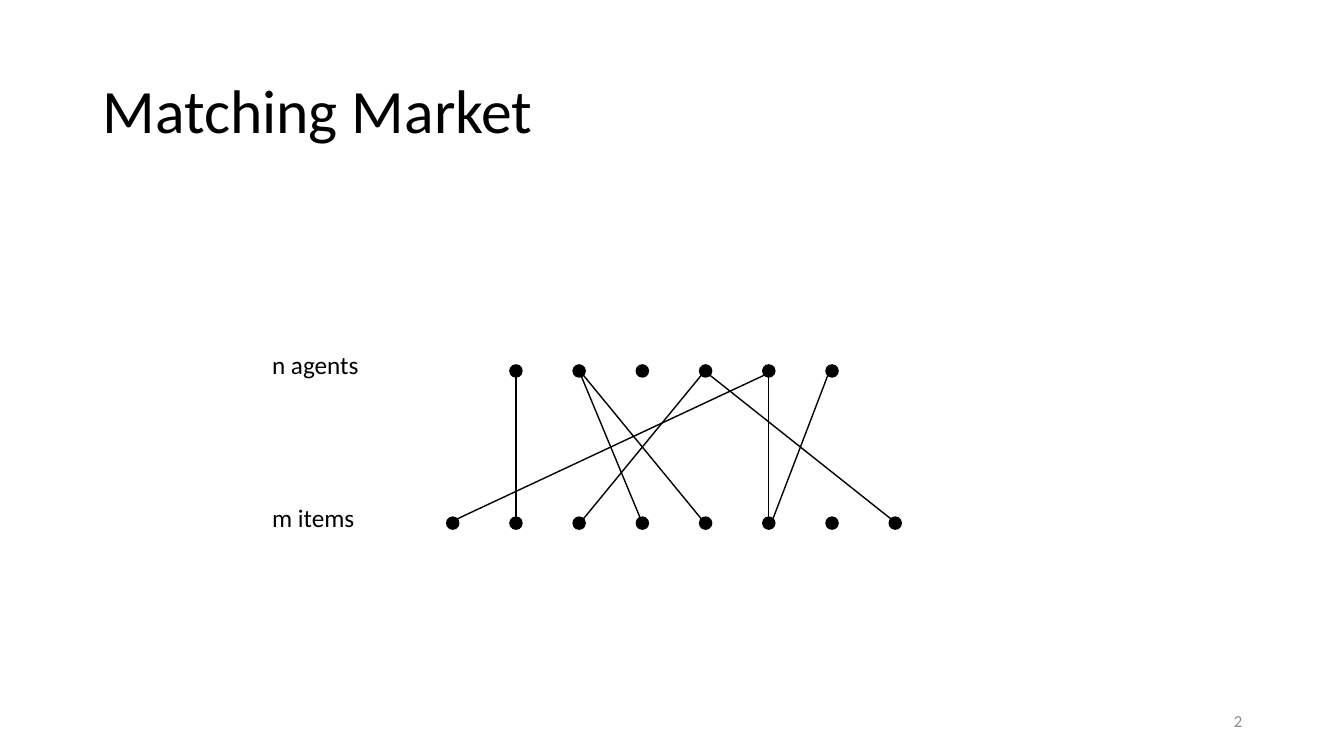
from dataclasses import dataclass

from lxml import etree
from pptx import Presentation
from pptx.dml.color import RGBColor
from pptx.enum.shapes import MSO_CONNECTOR, MSO_SHAPE
from pptx.enum.text import MSO_ANCHOR, PP_ALIGN
from pptx.oxml.ns import qn
from pptx.util import Inches, Pt

OVAL = MSO_SHAPE.OVAL
STRAIGHT = MSO_CONNECTOR.STRAIGHT
TOP, MIDDLE = MSO_ANCHOR.TOP, MSO_ANCHOR.MIDDLE
LEFT, RIGHT = PP_ALIGN.LEFT, PP_ALIGN.RIGHT
BLANK_LAYOUT = 6


@dataclass(frozen=True)
class Theme:
    font: str = "Calibri"
    ink: RGBColor = RGBColor(0, 0, 0)
    muted: RGBColor = RGBColor(0x8C, 0x8C, 0x8C)
    title_size: int = 44
    label_size: int = 18
    number_size: int = 12
    line_width: int = 1


THEME = Theme()
SLIDE_WIDTH, SLIDE_HEIGHT = 13.33, 7.5

# Graph grid, in inches: column 0 holds the first item.
FIRST_COLUMN, COLUMN_STEP = 4.49, 0.627
AGENT_ROW, ITEM_ROW = 3.68, 5.19
DOT_SIZE = 0.12
RIM_OFFSET = 0.04
LABEL_LEFT, LABEL_RISE = 2.6, 0.26
LABEL_SIZE = (2.46, 0.4)

AGENT_COLUMNS = range(1, 7)
ITEM_COLUMNS = range(8)
# Pairs of agent column and item column.
CENTRE_EDGES = [(1, 1), (5, 5), (2, 3)]
RIM_EDGES = [(4, 7), (4, 2), (6, 5), (2, 4), (5, 0)]


def column_x(column):
    return FIRST_COLUMN + column * COLUMN_STEP


def add_text(slide, text, box, size, color=THEME.ink, anchor=TOP, align=LEFT):
    shape = slide.shapes.add_textbox(*map(Inches, box))
    frame = shape.text_frame
    frame.word_wrap = True
    frame.vertical_anchor = anchor
    frame.text = text
    paragraph = frame.paragraphs[0]
    paragraph.alignment = align
    font = paragraph.runs[0].font
    font.name, font.size = THEME.font, Pt(size)
    font.color.rgb = color
    return paragraph


def add_dot(slide, column, row_y):
    left, top = column_x(column) - DOT_SIZE / 2, row_y - DOT_SIZE / 2
    dot = slide.shapes.add_shape(
        OVAL, Inches(left), Inches(top), Inches(DOT_SIZE), Inches(DOT_SIZE))
    dot.shadow.inherit = False
    dot.fill.solid()
    dot.fill.fore_color.rgb = THEME.ink
    dot.line.color.rgb = THEME.ink
    dot.line.width = Pt(THEME.line_width)


def add_edge(slide, agent, item, inset=0):
    """Join an agent to an item, each end moved diagonally inward by inset."""
    shift = inset if item > agent else -inset
    ends = (column_x(agent) + shift, AGENT_ROW + inset,
            column_x(item) - shift, ITEM_ROW - inset)
    edge = slide.shapes.add_connector(STRAIGHT, *map(Inches, ends))
    edge.line.color.rgb = THEME.ink
    edge.line.width = Pt(THEME.line_width)
    etree.SubElement(edge._element.spPr, qn("a:effectLst"))


def add_node_row(slide, label, columns, row_y):
    for column in columns:
        add_dot(slide, column, row_y)
    add_text(slide, label, (LABEL_LEFT, row_y - LABEL_RISE, *LABEL_SIZE),
             THEME.label_size)


def main():
    presentation = Presentation()
    presentation.slide_width = Inches(SLIDE_WIDTH)
    presentation.slide_height = Inches(SLIDE_HEIGHT)
    slide = presentation.slides.add_slide(
        presentation.slide_layouts[BLANK_LAYOUT])

    title = add_text(slide, "Matching Market", (0.92, 0.4, 11.5, 1.45),
                     THEME.title_size, anchor=MIDDLE)
    title.line_spacing = 0.9

    add_node_row(slide, "n agents", AGENT_COLUMNS, AGENT_ROW)
    add_node_row(slide, "m items", ITEM_COLUMNS, ITEM_ROW)
    for agent, item in CENTRE_EDGES:
        add_edge(slide, agent, item)
    for agent, item in RIM_EDGES:
        add_edge(slide, agent, item, RIM_OFFSET)

    add_text(slide, "2", (9.42, 6.95, 3, 0.4), THEME.number_size,
             THEME.muted, MIDDLE, RIGHT)
    presentation.save("out.pptx")


if __name__ == "__main__":
    main()
